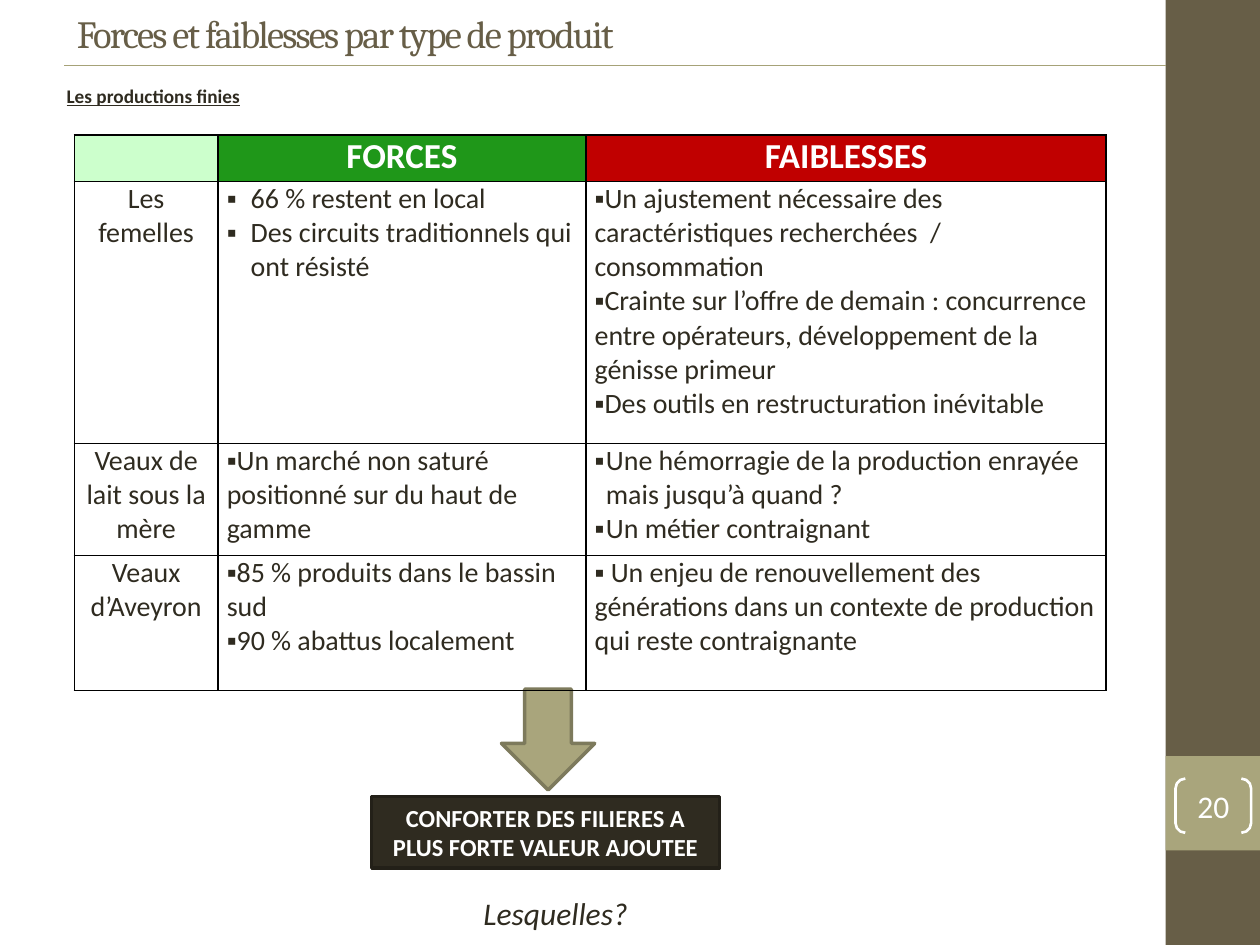
from lxml import etree
from pptx import Presentation
from pptx.dml.color import RGBColor
from pptx.enum.shapes import MSO_CONNECTOR, MSO_SHAPE
from pptx.enum.text import MSO_ANCHOR, PP_ALIGN
from pptx.oxml.ns import qn
from pptx.util import Inches, Pt

LEFT, CENTER = PP_ALIGN.LEFT, PP_ALIGN.CENTER
TOP, MIDDLE = MSO_ANCHOR.TOP, MSO_ANCHOR.MIDDLE
RECTANGLE, DOWN_ARROW = MSO_SHAPE.RECTANGLE, MSO_SHAPE.DOWN_ARROW
BRACKETS = MSO_SHAPE.DOUBLE_BRACKET
STRAIGHT = MSO_CONNECTOR.STRAIGHT
TITLE_ONLY = 5

BROWN, OLIVE, DARK, WHITE = "675E47", "A9A57C", "2F2B20", "FFFFFF"

COLUMN_WIDTHS = [1.14, 2.92, 4.13]
ROW_HEIGHTS = [0.37, 2.08, 0.89, 1.07]
HEADERS = [("", "CCFFCC"), ("FORCES", "1F9719"), ("FAIBLESSES", "C00000")]
# Each row: product, then (hanging indent, bulleted lines) for each column
PRODUCTS = [
    ("Les femelles",
     (0.19, ["66 % restent en local",
             "Des circuits traditionnels qui ont résisté"]),
     (0, ["Un ajustement nécessaire des caractéristiques recherchées  / consommation",
          "Crainte sur l’offre de demain : concurrence entre opérateurs, "
          "développement de la génisse primeur",
          "Des outils en restructuration inévitable"])),
    ("Veaux de lait sous la mère",
     (0, ["Un marché non saturé positionné sur du haut de gamme"]),
     (0.09, ["Une hémorragie de la production enrayée mais jusqu’à quand ?",
             "Un métier contraignant"])),
    ("Veaux d’Aveyron",
     (0, ["85 % produits dans le bassin sud", "90 % abattus localement"]),
     (0, [" Un enjeu de renouvellement des générations dans un contexte de "
          "production qui reste contraignante"])),
]


def color(value):
    return RGBColor.from_string(value)


def inches(box):
    return [Inches(length) for length in box]


def write(frame, lines, size, text_color, align=LEFT, font="Calibri",
          bold=False, italic=False, underline=False):
    frame.word_wrap = True
    for index, line in enumerate(lines):
        para = frame.paragraphs[0] if index == 0 else frame.add_paragraph()
        para.text = line
        para.alignment = align
        para.font.name, para.font.size = font, Pt(size)
        para.font.color.rgb = color(text_color)
        para.font.bold, para.font.italic = bold, italic
        para.font.underline = underline


def add_shape(slide, kind, box, fill=None, line=None, line_width=1):
    shape = slide.shapes.add_shape(kind, *inches(box))
    shape.shadow.inherit = False
    if fill:
        shape.fill.solid()
        shape.fill.fore_color.rgb = color(fill)
    else:
        shape.fill.background()
    if line:
        shape.line.color.rgb = color(line)
        shape.line.width = Pt(line_width)
    else:
        shape.line.fill.background()
    return shape


def add_text(slide, box, text, size, **style):
    frame = slide.shapes.add_textbox(*inches(box)).text_frame
    write(frame, [text], size, DARK, **style)


def add_sidebar(slide, box, number):
    left, top, width, height = box
    add_shape(slide, RECTANGLE, box, BROWN)
    add_shape(slide, RECTANGLE, (left, top + 6, width, width), OLIVE)
    brackets = add_shape(slide, BRACKETS, (left + 0.08, top + 6.18, 0.6, 0.43),
                         line=WHITE, line_width=1.5)
    brackets.adjustments[0] = 0.18
    frame = brackets.text_frame
    frame.margin_left = frame.margin_right = 0
    frame.margin_top = frame.margin_bottom = 0
    frame.vertical_anchor = MIDDLE
    write(frame, [number], 18, WHITE, CENTER)


def add_title(slide, box, rule_end, text):
    left, top, width, height = box
    title = slide.shapes.title
    title.left, title.top, title.width, title.height = inches(box)
    title.text_frame.vertical_anchor = MIDDLE
    write(title.text_frame, [text], 22, BROWN, font="Cambria")
    # Tightened letter spacing
    span = title.text_frame.paragraphs[0].runs[0]
    span.font._element.set("spc", "-100")
    # Rule under the title
    bottom = top + height
    rule = slide.shapes.add_connector(
        STRAIGHT, *inches((left, bottom, rule_end, bottom)))
    rule.line.color.rgb = color("A6A278")
    rule.line.width = Pt(1)
    etree.SubElement(rule._element.spPr, qn("a:effectLst"))


def add_borders(cell):
    properties = cell._tc.get_or_add_tcPr()
    for index, side in enumerate(("lnL", "lnR", "lnT", "lnB")):
        border = etree.Element(qn(f"a:{side}"), w=str(Pt(1)))
        fill = etree.SubElement(border, qn("a:solidFill"))
        etree.SubElement(fill, qn("a:srgbClr"), val="000000")
        properties.insert(index, border)


def add_bullets(frame, indent):
    for para in frame.paragraphs:
        properties = para._p.get_or_add_pPr()
        properties.set("marL", str(Inches(indent)))
        properties.set("indent", str(-Inches(indent)))
        etree.SubElement(properties, qn("a:buFont"), typeface="Arial")
        etree.SubElement(properties, qn("a:buChar"), char="▪")
        # Bullet elements come before the default run properties
        defaults = properties.find(qn("a:defRPr"))
        if defaults is not None:
            properties.append(defaults)


def format_cell(cell, fill=None):
    cell.margin_left = cell.margin_right = Inches(0.07)
    cell.margin_top = cell.margin_bottom = 0
    cell.vertical_anchor = TOP
    if fill:
        cell.fill.solid()
        cell.fill.fore_color.rgb = color(fill)
    else:
        cell.fill.background()
    add_borders(cell)


def add_comparison(slide, box):
    table = slide.shapes.add_table(
        len(ROW_HEIGHTS), len(COLUMN_WIDTHS), *inches(box)).table
    table.first_row = table.horz_banding = False
    for column, width in zip(table.columns, COLUMN_WIDTHS):
        column.width = Inches(width)
    for row, height in zip(table.rows, ROW_HEIGHTS):
        row.height = Inches(height)
    # Header row
    for cell, (text, fill) in zip(table.rows[0].cells, HEADERS):
        format_cell(cell, fill)
        write(cell.text_frame, [text], 20, WHITE, CENTER, bold=True)
    # One row per product
    for row_index, (product, *columns) in enumerate(PRODUCTS, start=1):
        name_cell = table.cell(row_index, 0)
        format_cell(name_cell)
        write(name_cell.text_frame, [product], 16, DARK, CENTER)
        for column_index, (indent, lines) in enumerate(columns, start=1):
            cell = table.cell(row_index, column_index)
            format_cell(cell)
            write(cell.text_frame, lines, 16, DARK)
            add_bullets(cell.text_frame, indent)


def add_conclusion(slide, box):
    left, top, width, height = box
    message = add_shape(slide, RECTANGLE, (left, top + 0.85, width, 0.57),
                        DARK, "232018", 2)
    message.text_frame.vertical_anchor = MIDDLE
    write(message.text_frame,
          ["CONFORTER DES FILIERES A PLUS FORTE VALEUR AJOUTEE"],
          14, WHITE, CENTER, bold=True)
    add_shape(slide, DOWN_ARROW, (left + 1.03, top, 0.74, 0.8), OLIVE, "7D7A5C", 2)
    add_text(slide, (left + 0.08, top + height - 0.4, width, 0.4),
             "Lesquelles?", 18, align=CENTER, italic=True)


def main():
    deck = Presentation()
    deck.slide_width, deck.slide_height = Inches(10), Inches(7.5)
    slide = deck.slides.add_slide(deck.slide_layouts[TITLE_ONLY])
    add_sidebar(slide, (9.25, 0, 0.75, 7.5), "20")
    add_text(slide, (0.43, 0.62, 2.44, 0.29), "Les productions finies", 11,
             bold=True, underline=True)
    add_title(slide, (0.51, 0, 8.33, 0.52), 9.25,
              "Forces et faiblesses par type de produit")
    add_conclusion(slide, (2.95, 5.47, 2.76, 1.98))
    add_comparison(slide, (0.59, 1.07, 8.19, 4.41))
    deck.save("out.pptx")


if __name__ == "__main__":
    main()
